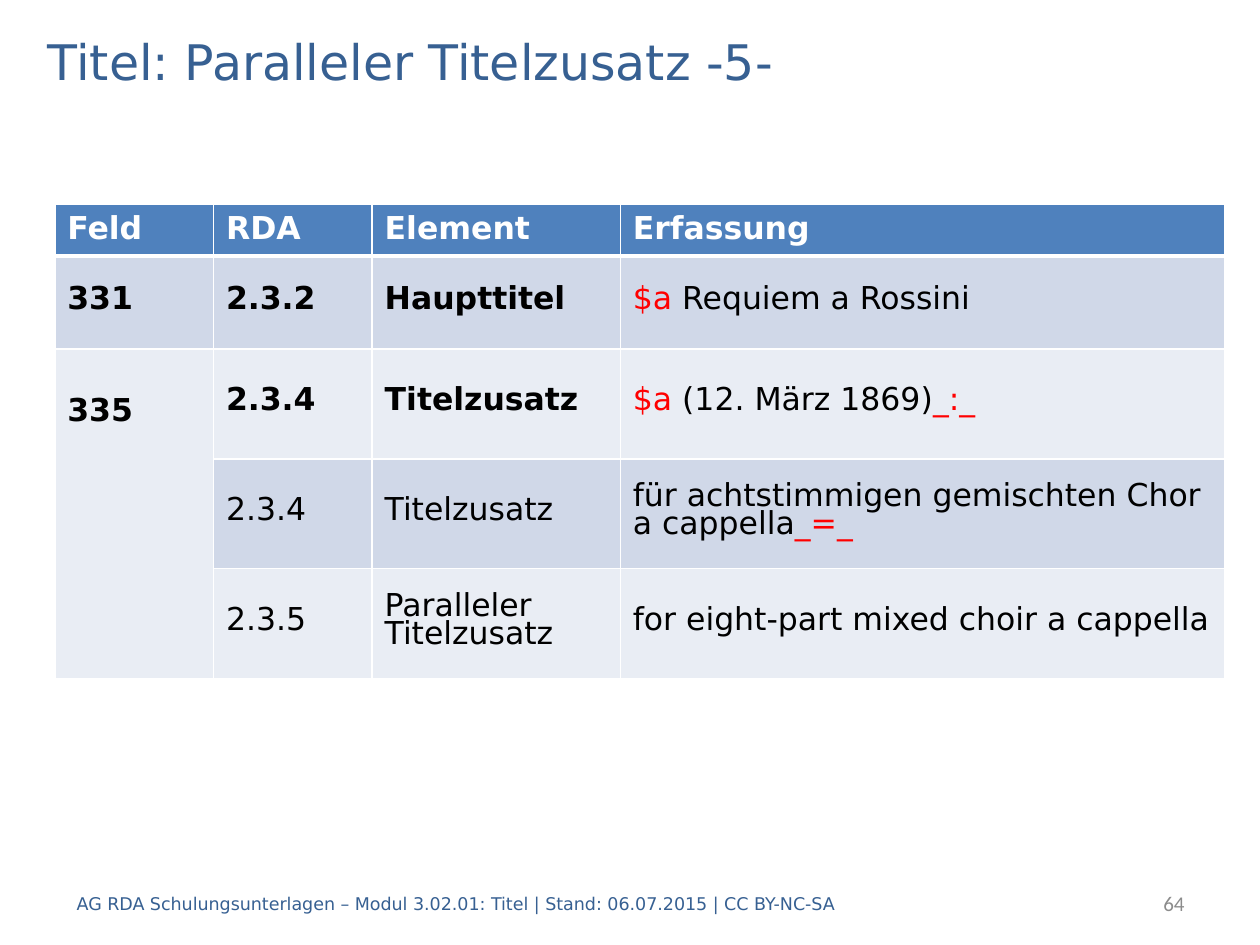
from lxml import etree
from pptx import Presentation
from pptx.dml.color import RGBColor
from pptx.enum.text import MSO_ANCHOR, PP_ALIGN
from pptx.oxml.ns import qn
from pptx.util import Pt

TOP, MIDDLE = MSO_ANCHOR.TOP, MSO_ANCHOR.MIDDLE
LEFT, RIGHT = PP_ALIGN.LEFT, PP_ALIGN.RIGHT
TITLE_ONLY = 5

SANS = "DejaVu Sans"
BLUE, WHITE, BLACK, RED, GRAY = "376092", "FFFFFF", "000000", "FF0000", "8C8C8C"
HEADER_FILL, BAND_FILLS = "4F81BD", ("D0D8E8", "E9EDF4")

COLUMN_WIDTHS = (90.7, 90.7, 141.8, 345.7)
ROW_HEIGHTS = (29.5, 53.3, 62.7, 62.7, 62.7)
HEADINGS = ("Feld", "RDA", "Element", "Erfassung")

# Each row: bold labels?, three labels, runs of the last column
ENTRIES = (
    (True, "331", "2.3.2", "Haupttitel",
     [("$a ", RED), ("Requiem a Rossini", BLACK)]),
    (True, "335", "2.3.4", "Titelzusatz",
     [("$a ", RED), ("(12. März 1869)", BLACK), ("_:_", RED)]),
    (False, None, "2.3.4", "Titelzusatz",
     [("für achtstimmigen gemischten Chor a cappella", BLACK), ("_=_", RED)]),
    (False, None, "2.3.5", "Paralleler Titelzusatz",
     [("for eight-part mixed choir a cappella", BLACK)]),
)


def color(hex_value):
    return RGBColor.from_string(hex_value)


def set_attributes(target, values):
    for name, value in values.items():
        setattr(target, name, value)


def write_runs(paragraph, runs, size, font=SANS, bold=False):
    for text, hex_value in runs:
        run = paragraph.add_run()
        run.text = text
        set_attributes(run.font, {"name": font, "size": Pt(size), "bold": bold})
        run.font.color.rgb = color(hex_value)


def format_frame(frame, alignment):
    set_attributes(frame, {"word_wrap": True, "vertical_anchor": MIDDLE})
    frame.paragraphs[0].alignment = alignment
    return frame.paragraphs[0]


def add_title(slide, text):
    title = slide.shapes.title
    set_attributes(title, {"left": Pt(20.2), "top": Pt(14.4),
                           "width": Pt(680.4), "height": Pt(40.3)})
    write_runs(format_frame(title.text_frame, LEFT), [(text, BLUE)], 28)


def add_footer_text(slide, left, width, text, size, font, hex_value, alignment):
    box = slide.shapes.add_textbox(Pt(left), Pt(501.8), Pt(width), Pt(28.8))
    paragraph = format_frame(box.text_frame, alignment)
    write_runs(paragraph, [(text, hex_value)], size, font)


def set_borders(cell, top=1, bottom=1):
    properties = cell._tc.get_or_add_tcPr()
    sides = (("a:lnL", 1), ("a:lnR", 1), ("a:lnT", top), ("a:lnB", bottom))
    for index, (tag, width) in enumerate(sides):
        line = etree.Element(qn(tag), w=str(Pt(width)))
        fill = etree.SubElement(line, qn("a:solidFill"))
        etree.SubElement(fill, qn("a:srgbClr"), val=WHITE)
        properties.insert(index, line)


def fill_cell(cell, hex_value, anchor=MIDDLE):
    cell.fill.solid()
    cell.fill.fore_color.rgb = color(hex_value)
    cell.vertical_anchor = anchor


def write_entry(cell, runs, bold, line_spacing=Pt(16)):
    paragraph = cell.text_frame.paragraphs[0]
    set_attributes(paragraph, {"line_spacing": line_spacing, "space_after": Pt(6)})
    write_runs(paragraph, runs, 18, bold=bold)


def add_title_table(slide):
    table = slide.shapes.add_table(
        len(ROW_HEIGHTS), len(COLUMN_WIDTHS), Pt(31.3), Pt(116.8),
        Pt(sum(COLUMN_WIDTHS)), Pt(sum(ROW_HEIGHTS))).table
    for column, width in zip(table.columns, COLUMN_WIDTHS):
        column.width = Pt(width)
    for row, height in zip(table.rows, ROW_HEIGHTS):
        row.height = Pt(height)

    # Heading row
    for column, heading in enumerate(HEADINGS):
        cell = table.cell(0, column)
        fill_cell(cell, HEADER_FILL, TOP)
        set_borders(cell, bottom=3)
        write_runs(cell.text_frame.paragraphs[0], [(heading, WHITE)], 18, bold=True)

    # Banded entries; field 335 covers the last three rows
    for row, (bold, *labels, entry) in enumerate(ENTRIES, start=1):
        for column in range(len(COLUMN_WIDTHS)):
            cell = table.cell(row, column)
            spanning = column == 0 and row > 1
            band = 1 if spanning else (row - 1) % 2
            fill_cell(cell, BAND_FILLS[band], TOP if spanning else MIDDLE)
            set_borders(cell, top=3 if row == 1 else 1)
            if column == len(labels):
                write_entry(cell, entry, False)
            elif labels[column]:
                write_entry(cell, [(labels[column], BLACK)], bold,
                            2.0 if spanning else Pt(16))
    table.cell(2, 0).merge(table.cell(4, 0))


def main():
    presentation = Presentation()
    set_attributes(presentation, {"slide_width": Pt(720), "slide_height": Pt(540)})
    slide = presentation.slides.add_slide(presentation.slide_layouts[TITLE_ONLY])

    add_title(slide, "Titel: Paralleler Titelzusatz -5-")
    add_title_table(slide)

    # Footer
    add_footer_text(slide, 569.5, 114.5, "64", 12, "Calibri", GRAY, RIGHT)
    add_footer_text(
        slide, 36.7, 481.7,
        "AG RDA Schulungsunterlagen – Modul 3.02.01: Titel | "
        "Stand: 06.07.2015 | CC BY-NC-SA", 10, SANS, BLUE, LEFT)

    presentation.save("out.pptx")


if __name__ == "__main__":
    main()
